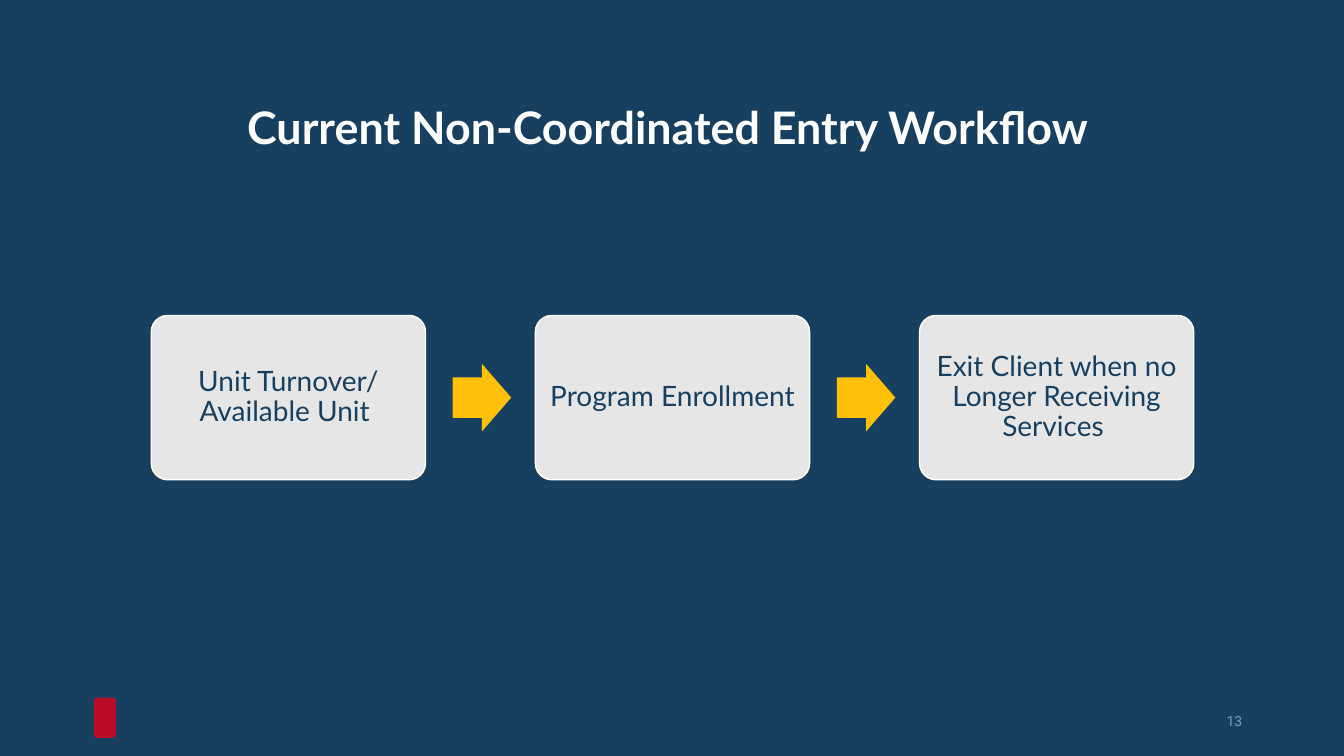
from pptx import Presentation
from pptx.dml.color import RGBColor
from pptx.enum import shapes, text
from pptx.util import Inches, Pt

NAVY = RGBColor(0x17, 0x40, 0x60)
WHITE = RGBColor(0xFF, 0xFF, 0xFF)
GREY = RGBColor(0xE7, 0xE6, 0xE6)
AMBER = RGBColor(0xFF, 0xC1, 0x07)
RED = RGBColor(0xB8, 0x0C, 0x29)
MUTED = RGBColor(0x7D, 0x9C, 0xB7)

STEPS = [
    "Unit Turnover/ Available Unit ",
    "Program Enrollment ",
    "Exit Client when no Longer Receiving Services ",
]
STEP_LEFT, STEP_TOP, STEP_WIDTH, STEP_HEIGHT = 1.5, 3.13, 2.72, 1.63
STEP_PITCH = 3.81
ARROW_OFFSET, ARROW_WIDTH, ARROW_HEIGHT = 2.99, 0.58, 0.67


def write(box, words, size, color, font="Lato", bold=False,
          align=text.PP_ALIGN.CENTER, anchor=text.MSO_ANCHOR.MIDDLE, spacing=0.9):
    """Write one styled paragraph into a box."""
    frame = box.text_frame
    frame.word_wrap = True
    frame.vertical_anchor = anchor
    para = frame.paragraphs[0]
    para.alignment = align
    para.line_spacing = spacing
    span = para.add_run()
    span.text = words
    span.font.name = font
    span.font.size = Pt(size)
    span.font.bold = bold
    span.font.color.rgb = color


def add_label(page, left, top, width, height, words, size, color, **style):
    """Add a text box with one paragraph."""
    box = page.shapes.add_textbox(
        Inches(left), Inches(top), Inches(width), Inches(height))
    write(box, words, size, color, **style)


def add_block(page, kind, left, top, width, height, fill, adjustments=()):
    """Add a flat filled preset shape without an outline."""
    block = page.shapes.add_shape(
        kind, Inches(left), Inches(top), Inches(width), Inches(height))
    block.shadow.inherit = False
    block.fill.solid()
    block.fill.fore_color.rgb = fill
    block.line.fill.background()
    for index, value in enumerate(adjustments):
        block.adjustments[index] = value
    return block


def add_step(page, left, words):
    """Add one rounded workflow step with its wording."""
    step = add_block(page, shapes.MSO_SHAPE.ROUNDED_RECTANGLE, left, STEP_TOP,
                     STEP_WIDTH, STEP_HEIGHT, GREY, [0.1])
    step.line.color.rgb = WHITE
    step.line.width = Pt(1)
    frame = step.text_frame
    frame.margin_left = frame.margin_right = Inches(0.08)
    frame.margin_top = frame.margin_bottom = Inches(0.08)
    write(step, words, 20, NAVY)


def add_workflow(page):
    """Add the row of steps with an arrow between neighbours."""
    arrow_top = STEP_TOP + (STEP_HEIGHT - ARROW_HEIGHT) / 2
    for index, words in enumerate(STEPS):
        left = STEP_LEFT + index * STEP_PITCH
        add_step(page, left, words)
        if index < len(STEPS) - 1:
            add_block(page, shapes.MSO_SHAPE.RIGHT_ARROW, left + ARROW_OFFSET,
                      arrow_top, ARROW_WIDTH, ARROW_HEIGHT, AMBER, [0.6, 0.5])


def main():
    """Build the workflow slide and save it."""
    deck = Presentation()
    deck.slide_width, deck.slide_height = Inches(13.33), Inches(7.5)
    page = deck.slides.add_slide(deck.slide_layouts[6])
    page.background.fill.solid()
    page.background.fill.fore_color.rgb = NAVY
    add_block(page, shapes.MSO_SHAPE.ROUNDED_RECTANGLE, 0.93, 6.92, 0.22, 0.4, RED)
    add_label(page, 0.92, 1, 11.5, 1.3, "Current Non-Coordinated Entry\u00a0Workflow ",
              32, WHITE, bold=True, anchor=text.MSO_ANCHOR.TOP)
    add_label(page, 9.42, 6.95, 3, 0.4, "13", 10, MUTED, font="Roboto",
              align=text.PP_ALIGN.RIGHT, spacing=1.0)
    add_workflow(page)
    deck.save("out.pptx")


if __name__ == "__main__":
    main()
